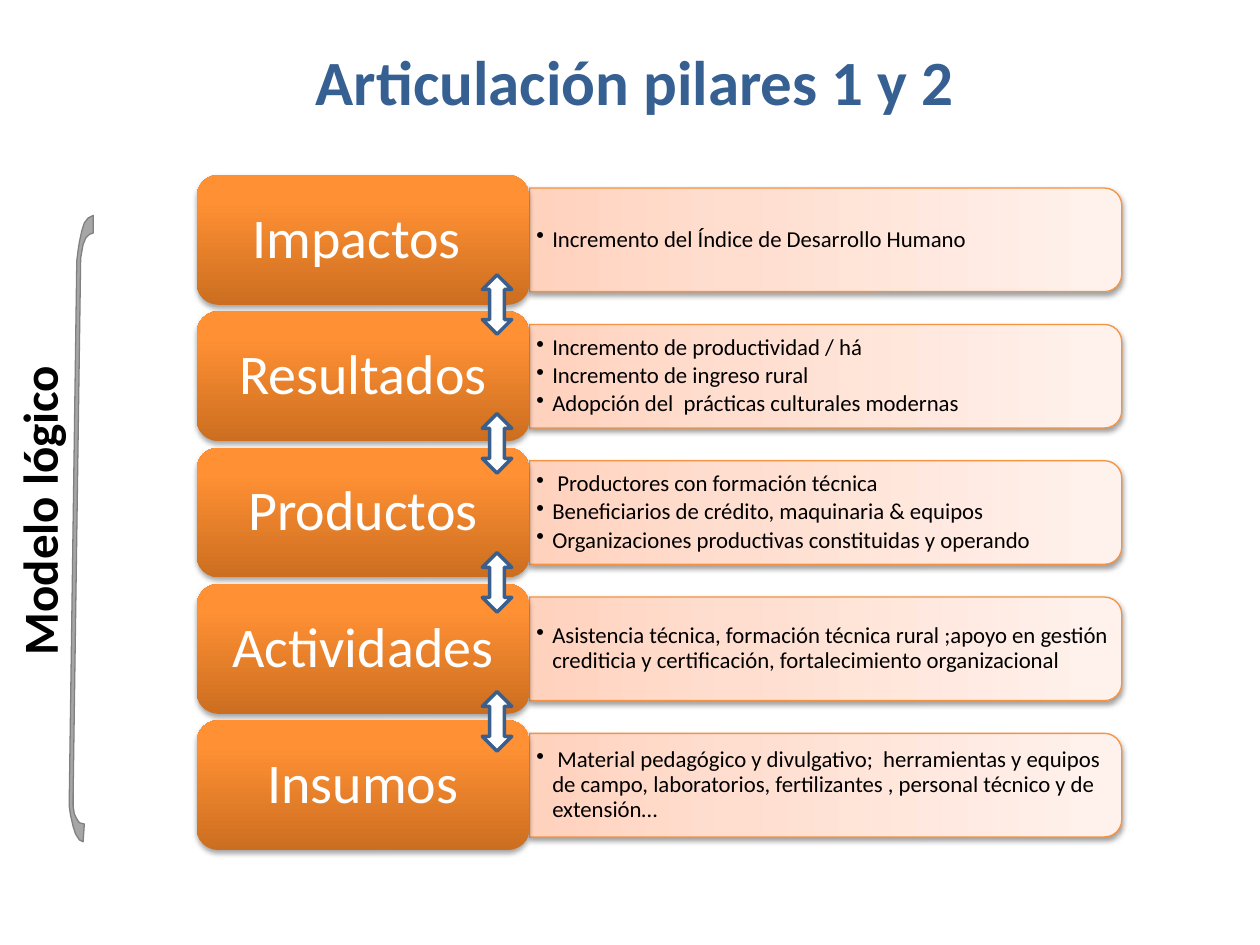
from dataclasses import dataclass

from lxml import etree
from pptx import Presentation
from pptx.dml.color import RGBColor
from pptx.enum import shapes, text
from pptx.oxml import ns
from pptx.util import Pt


@dataclass(frozen=True)
class Theme:
    font: str = "Calibri"
    title_size: float = 36
    label_size: float = 28
    tab_size: float = 32
    body_size: float = 13
    title: str = "376092"
    ink: str = "000000"
    paper: str = "FFFFFF"
    panel_line: str = "F69240"
    arrow_line: str = "3A5F8C"
    bracket: str = "A6A6A6"
    bracket_line: str = "808080"
    tab_stops: tuple = ((0, "CC6E20"), (80, "FF9034"), (100, "FF9136"))
    panel_stops: tuple = ((0, "FFD2BD"), (35, "FFDED0"), (100, "FFF2ED"))


def add_xml(parent, tag, **attributes):
    return etree.SubElement(parent, ns.qn(tag), attributes)


class LogicModelPage:
    def __init__(self, page, theme):
        self.page = page
        self.theme = theme

    def set_text(self, box, lines, size, color, bold=False, align=None,
                 spacing=None, after=None, insets=None, wrap=True):
        frame = box.text_frame
        frame.word_wrap = wrap
        if insets:
            across, down = map(Pt, insets)
            frame.margin_left = frame.margin_right = across
            frame.margin_top = frame.margin_bottom = down
            frame.vertical_anchor = text.MSO_ANCHOR.MIDDLE
        frame.text = "\n".join(lines)
        for para in frame.paragraphs:
            para.alignment = align
            para.line_spacing = spacing
            para.space_after = after
            for span in para.runs:
                span.font.name = self.theme.font
                span.font.size = Pt(size)
                span.font.bold = bold
                span.font.color.rgb = RGBColor.from_string(color)

    def text_box(self, frame, lines, size, color, **style):
        box = self.page.shapes.add_textbox(*map(Pt, frame))
        self.set_text(box, lines, size, color, **style)
        return box

    def bullets(self, frame, lines):
        box = self.text_box(frame, lines, self.theme.body_size, self.theme.ink,
                            spacing=0.9, after=Pt(2), insets=(3.6, 2.2))
        for para in box.text_frame.paragraphs:
            properties = para._p.get_or_add_pPr()
            properties.set("marL", str(Pt(9)))
            properties.set("indent", str(Pt(-9)))
            add_xml(properties, "a:buChar", char="•")

    def outline(self, shape, color, width):
        shape.line.color.rgb = RGBColor.from_string(color)
        shape.line.width = Pt(width)

    def solid(self, shape, fill, line, width):
        shape.shadow.inherit = False
        shape.fill.solid()
        shape.fill.fore_color.rgb = RGBColor.from_string(fill)
        self.outline(shape, line, width)

    def gradient_shape(self, kind, frame, stops, shadow_alpha):
        shape = self.page.shapes.add_shape(kind, *map(Pt, frame))
        shape.fill.gradient()
        shape.fill.gradient_angle = 90
        properties = shape._element.spPr
        stop_list = properties.find(".//" + ns.qn("a:gsLst"))
        for stop in list(stop_list):
            stop_list.remove(stop)
        for position, color in stops:
            stop = add_xml(stop_list, "a:gs", pos=str(position * 1000))
            add_xml(stop, "a:srgbClr", val=color)
        shape.line.fill.background()
        # Soft shadow straight below
        shape.shadow.inherit = False
        shadow = add_xml(properties.find(ns.qn("a:effectLst")), "a:outerShdw",
                         blurRad=str(Pt(3.1)), dist=str(Pt(1.7)),
                         dir="5400000", rotWithShape="0")
        color = add_xml(shadow, "a:srgbClr", val="000000")
        add_xml(color, "a:alpha", val=str(shadow_alpha * 1000))
        return shape

    def panel(self, left, middle, width, height):
        # Turned a quarter so that the rounded end faces right
        frame = (left + (width - height) / 2, middle - width / 2, height, width)
        shape = self.gradient_shape(shapes.MSO_SHAPE.ROUND_2_SAME_RECTANGLE,
                                    frame, self.theme.panel_stops, 38)
        shape.rotation = 90
        self.outline(shape, self.theme.panel_line, 0.75)

    def tab(self, frame, caption):
        shape = self.gradient_shape(shapes.MSO_SHAPE.ROUNDED_RECTANGLE,
                                    frame, self.theme.tab_stops, 35)
        self.set_text(shape, [caption], self.theme.tab_size, self.theme.paper,
                      align=text.PP_ALIGN.CENTER, spacing=0.9, insets=(9.4, 5))

    def double_arrow(self, frame):
        arrow = self.page.shapes.add_shape(
            shapes.MSO_SHAPE.UP_DOWN_ARROW, *map(Pt, frame))
        self.solid(arrow, self.theme.paper, self.theme.arrow_line, 2)

    def bracket(self, points):
        start, *rest = [(Pt(x), Pt(y)) for x, y in points]
        builder = self.page.shapes.build_freeform(*start)
        builder.add_line_segments(rest, close=True)
        self.solid(builder.convert_to_shape(), self.theme.bracket,
                   self.theme.bracket_line, 0)


BRACKET = [
    # Outer edge, upwards
    (47.5, 481), (45.4, 480), (43.2, 476.6), (41.8, 472.3), (40.3, 465.8),
    (39.6, 460.8), (39.6, 455), (43.9, 149), (44.6, 143.3), (45.4, 138.2),
    (46.8, 131.8), (48.2, 127.4), (50.4, 124.6), (53.3, 123.1),
    # Inner edge, downwards
    (53.3, 133.2), (51.1, 133.9), (49, 136.1), (47.5, 139.7), (46.1, 147.6),
    (41.8, 454.3), (41.8, 460.8), (42.5, 465.1), (43.9, 468), (45.4, 470.2),
    (48.2, 470.9),
]

LEVELS = [
    ("Impactos ", ["Incremento del Índice de Desarrollo Humano"]),
    ("Resultados", ["Incremento de productividad / há",
                    "Incremento de ingreso rural",
                    "Adopción del  prácticas culturales modernas"]),
    ("Productos", [" Productores con formación técnica",
                   "Beneficiarios de crédito, maquinaria & equipos",
                   "Organizaciones productivas constituidas y operando"]),
    ("Actividades", ["Asistencia técnica, formación técnica rural ;apoyo en gestión "
                     "crediticia y certificación, fortalecimiento organizacional"]),
    ("Insumos", [" Material pedagógico y divulgativo;  herramientas y equipos "
                 "de campo, laboratorios, fertilizantes , personal técnico y de "
                 "extensión…"]),
]


def main():
    deck = Presentation()
    deck.slide_width, deck.slide_height = Pt(720), Pt(540)
    theme = Theme()
    model = LogicModelPage(deck.slides.add_slide(deck.slide_layouts[6]), theme)

    # Title and side label
    model.text_box((30, 21, 666, 51), ["Articulación pilares 1 y 2"],
                   theme.title_size, theme.title, bold=True,
                   align=text.PP_ALIGN.CENTER)
    label = model.text_box((-72, 267, 188, 41), ["Modelo lógico"],
                           theme.label_size, theme.ink, bold=True, wrap=False)
    label.rotation = 270
    model.bracket(BRACKET)

    # One row per level: panel, bullets, tab
    first_middle, row_pitch, tab_height = 137.1, 77.9, 74.2
    for row, (caption, lines) in enumerate(LEVELS):
        middle = first_middle + row * row_pitch
        model.panel(302.6, middle, 338.4, 59.2)
        model.bullets((303, middle - 26.7, 335.5, 53.4), lines)
        model.tab((112.4, middle - tab_height / 2, 190.2, tab_height), caption)

    # Arrows between neighbouring levels
    for gap in range(len(LEVELS) - 1):
        model.double_arrow((275.6, 157 + gap * 79.4, 16.8, 34))

    deck.save("out.pptx")


if __name__ == "__main__":
    main()
